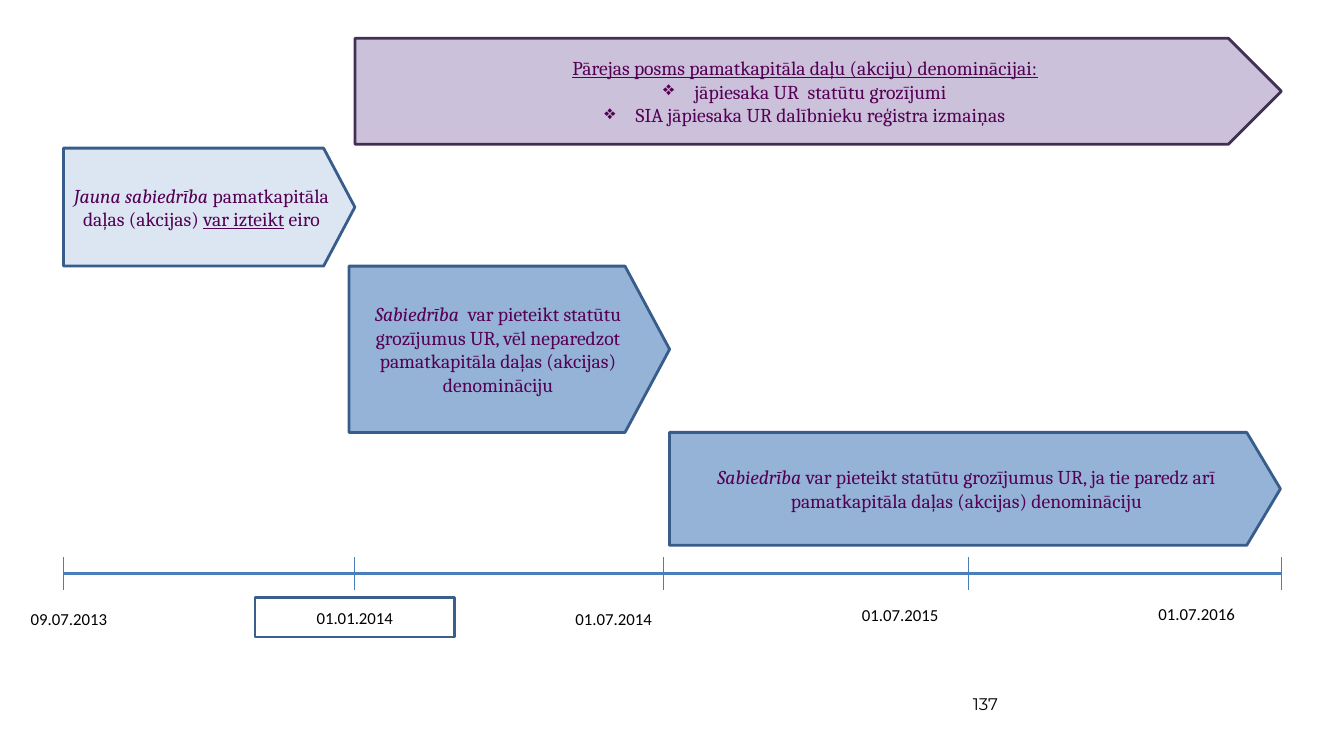
from lxml import etree
from pptx import Presentation
from pptx import util as u
from pptx.dml.color import RGBColor
from pptx.enum import shapes, text
from pptx.oxml.ns import qn

prs = Presentation()
prs.slide_width, prs.slide_height = u.Inches(13.33), u.Inches(7.5)
s = prs.slides.add_slide(prs.slide_layouts[6])

# Grid of 100 columns by 100 rows; every box is (left, top, width, height)
COL, ROW = prs.slide_width / 100, prs.slide_height / 100
PLUM, NAVY, SKY, STEEL = "540054", "385D8A", "4A7EBB", "95B3D7"


def color(value):
    return RGBColor.from_string(value)


def grid(left, top, width, height):
    return int(left * COL), int(top * ROW), int(width * COL), int(height * ROW)


def add_text(p, words, size=14, font="Cambria", fill=PLUM, italic=False, underline=False):
    r = p.add_run()
    r.text = words
    r.font.size, r.font.name = u.Pt(size), font
    r.font.italic, r.font.underline = italic, underline
    r.font.color.rgb = color(fill)


def add_bullet(p, char):
    pPr = p._p.get_or_add_pPr()
    indent = u.Inches(0.31)
    pPr.set("marL", str(indent))
    pPr.set("indent", str(-indent))
    etree.SubElement(pPr, qn("a:buChar")).set("char", char)


def add_label(box, words, **fmt):
    sp = s.shapes.add_textbox(*grid(*box))
    sp.text_frame.word_wrap = True
    add_text(sp.text_frame.paragraphs[0], words, **fmt)


def add_box(kind, box, fill, line):
    sp = s.shapes.add_shape(kind, *grid(*box))
    sp.shadow.inherit = False
    sp.fill.solid()
    sp.fill.fore_color.rgb = color(fill)
    sp.line.color.rgb = color(line)
    sp.line.width = u.Pt(2)
    tf = sp.text_frame
    tf.word_wrap = True
    tf.vertical_anchor = text.MSO_ANCHOR.MIDDLE
    tf.margin_left = tf.margin_right = u.Inches(0.08)
    return sp


def add_stage(box, point, fill, line, paragraphs):
    """Draw an arrow-shaped stage; each paragraph is (bullet, runs)."""
    sp = add_box(shapes.MSO_SHAPE.PENTAGON, box, fill, line)
    sp.adjustments[0] = point
    tf = sp.text_frame
    for i, (bullet, runs) in enumerate(paragraphs):
        p = tf.add_paragraph() if i else tf.paragraphs[0]
        p.alignment = text.PP_ALIGN.CENTER
        if bullet:
            add_bullet(p, bullet)
        for words, fmt in runs:
            add_text(p, words, **fmt)


def add_line(x1, y1, x2, y2, width):
    c = s.shapes.add_connector(shapes.MSO_CONNECTOR.STRAIGHT, int(x1 * COL),
                               int(y1 * ROW), int(x2 * COL), int(y2 * ROW))
    c.line.color.rgb = color(SKY)
    c.line.width = u.Pt(width)
    etree.SubElement(c._element.spPr, qn("a:effectLst"))


def add_timeline(box, ticks, dates, current):
    """Draw the axis; tick and date offsets count from the box's corner."""
    left, top, width, height = box
    middle = top + height / 2
    add_line(left, middle, left + width, middle, 2.75)
    for tick in ticks:
        add_line(left + tick, top, left + tick, top + height, 0.75)
    fmt = dict(size=12, font="Calibri", fill="000000")
    for words, dx, dy in dates:
        add_label((left + dx, top + dy, 12.53, 4), words, **fmt)
    words, dx, dy = current
    sp = add_box(shapes.MSO_SHAPE.RECTANGLE, (left + dx, top + dy, 14.85, 5.2),
                 "FFFFFF", "3A5F8C")
    p = sp.text_frame.paragraphs[0]
    p.alignment = text.PP_ALIGN.CENTER
    add_text(p, words, **fmt)


ITALIC, UNDERLINE = dict(italic=True), dict(underline=True)

# Stages
add_stage((4.73, 19.6, 21.68, 15.6), 0.265, "DCE6F2", NAVY, [
    (None, [("Jauna sabiedrība ", ITALIC), ("pamatkapitāla daļas (akcijas) ", {}),
            ("var izteikt", UNDERLINE), (" eiro", {})])])
add_stage((25.96, 35.2, 23.86, 22), 0.268, STEEL, NAVY, [
    (None, [("Sabiedrība", ITALIC),
            ("  var pieteikt statūtu grozījumus UR, vēl neparedzot "
             "pamatkapitāla daļas (akcijas) denomināciju", {})])])
add_stage((49.81, 57.2, 45.46, 14.93), 0.298, STEEL, NAVY, [
    (None, [("Sabiedrība", ITALIC),
            (" var pieteikt statūtu grozījumus UR, ja tie paredz arī "
             "pamatkapitāla daļas (akcijas) denomināciju", {})])])

# Transition period
add_stage((26.41, 5.07, 68.94, 14), 0.5, "CCC1DA", "403152", [
    (None, [("Pārejas posms pamatkapitāla daļu (akciju) denominācijai:", UNDERLINE)]),
    ("❖", [("jāpiesaka UR  statūtu grozījumi", {})]),
    ("❖", [("SIA jāpiesaka UR dalībnieku reģistra izmaiņas", {})])])

# Timeline
add_timeline((4.7, 73.73, 90.65, 4.27), (0, 21.7, 44.7, 67.35, 90.65),
             [("09.07.2013", -3.15, 6.13), ("01.07.2014", 37.38, 6.13),
              ("01.07.2015", 58.7, 5.6), ("01.07.2016", 80.75, 5.47)],
             ("01.01.2014", 14.28, 5.33))

# Page number
add_label((71.64, 91.07, 23.33, 6.67), "137", size=12, font="Montserrat", fill="000000")

prs.save("out.pptx")
